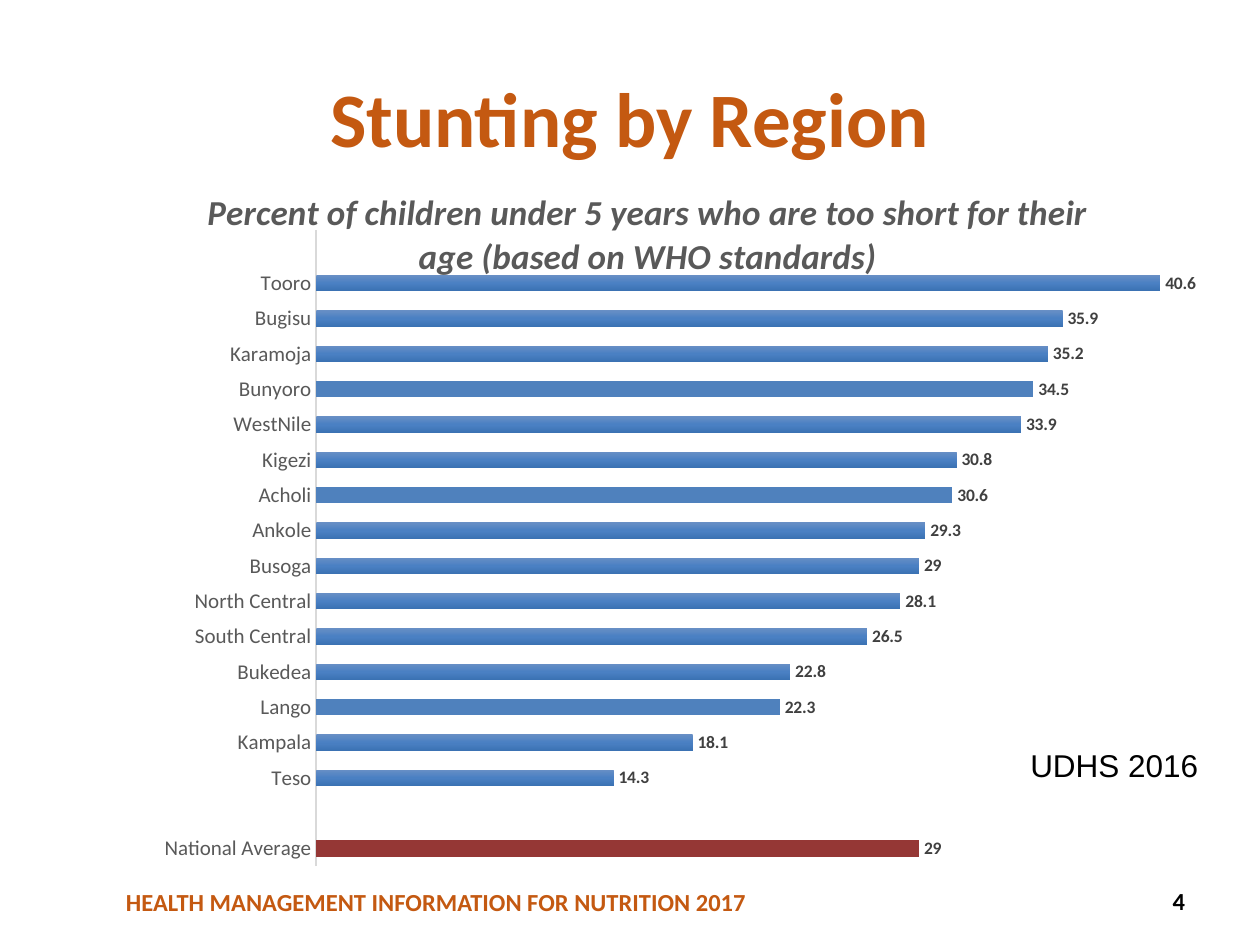
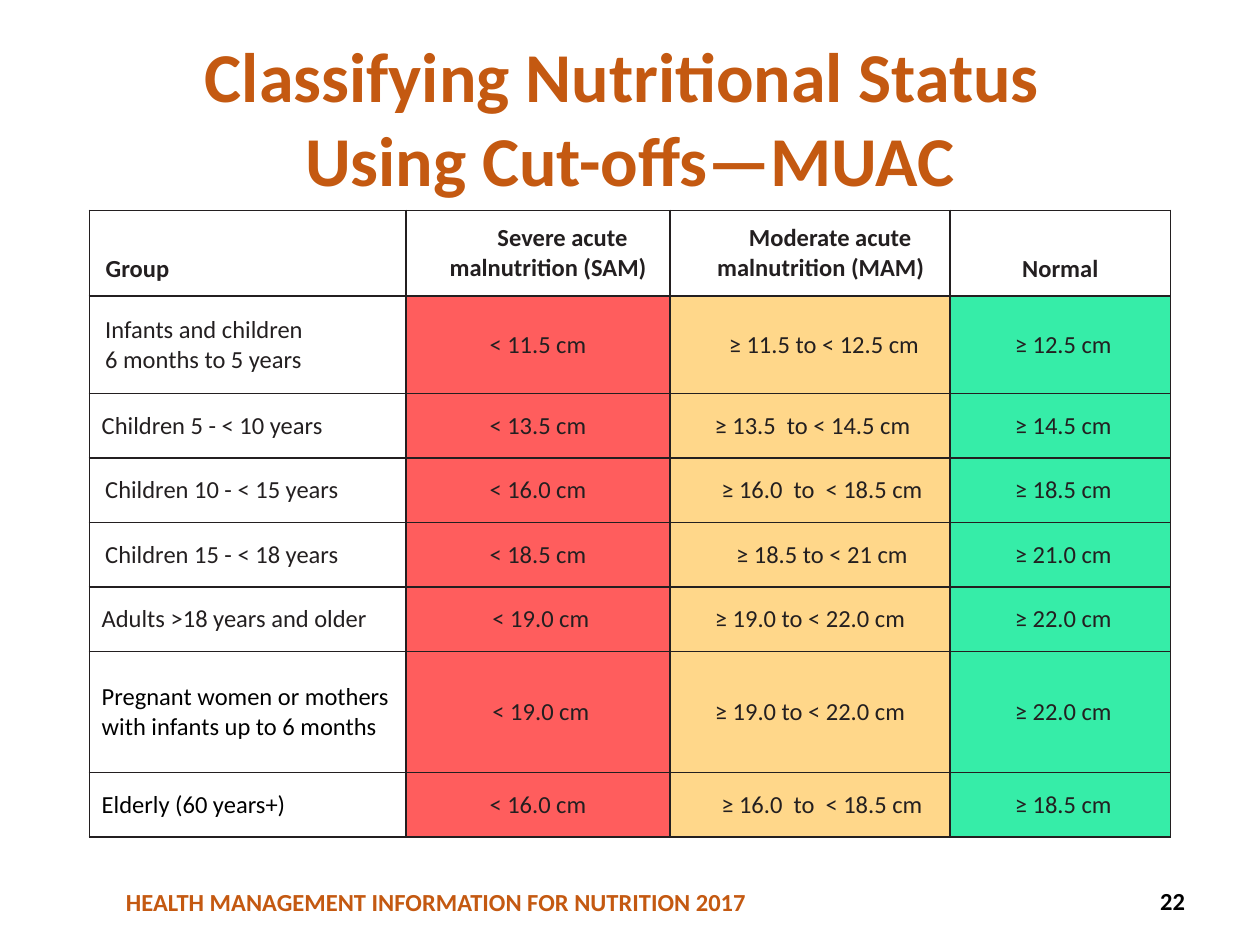
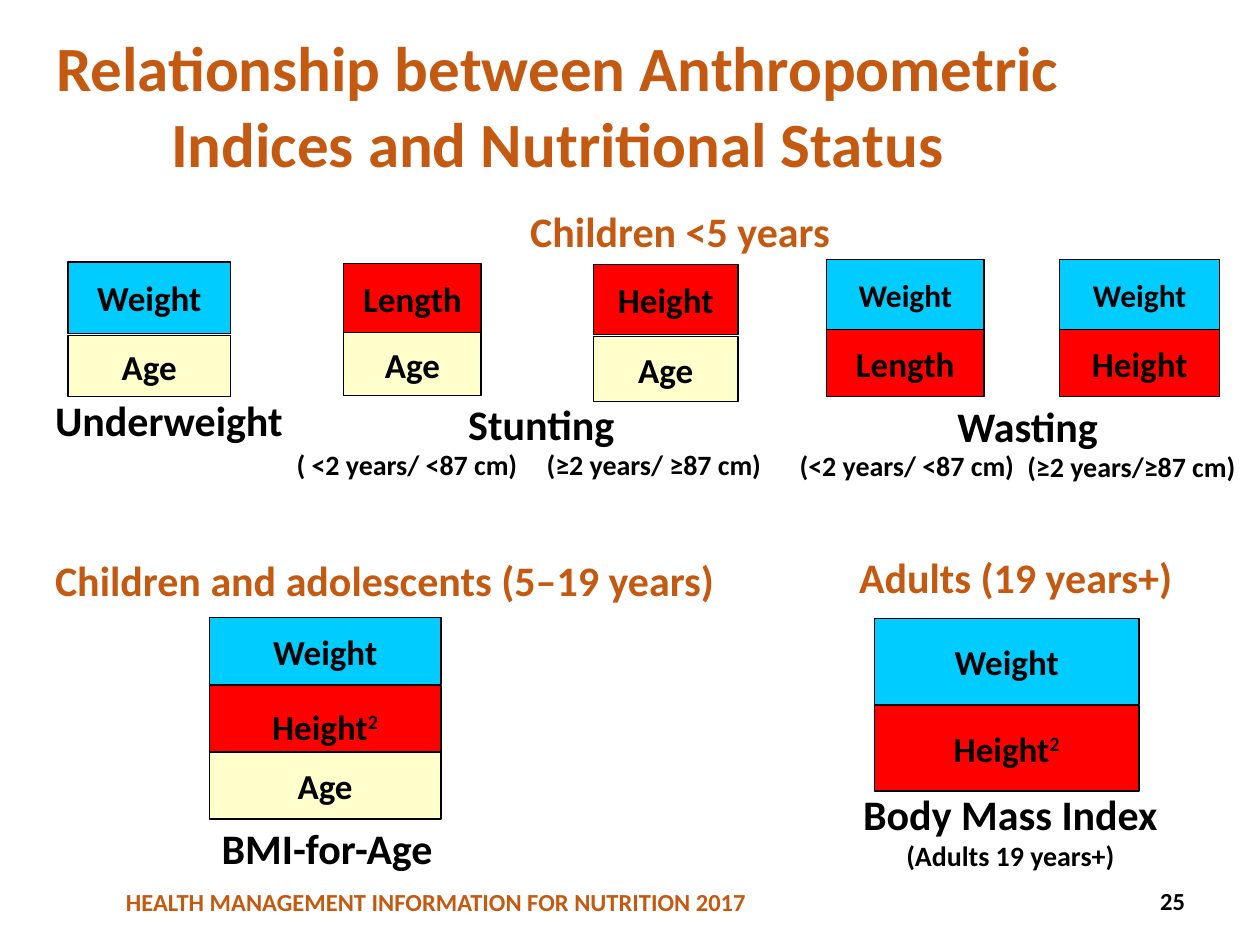
"""Build three nutrition slides: a stunting chart, a MUAC table and an indices diagram."""
from copy import deepcopy

from pptx import Presentation
from pptx import util as u
from pptx.chart.data import CategoryChartData
from pptx.dml.color import RGBColor
from pptx.enum import chart as charts, shapes, text
from pptx.oxml import parse_xml
from pptx.oxml.ns import nsdecls

COLORS = {
    "title": "C45911", "black": "000000", "white": "FFFFFF", "ink": "231F20",
    "gray": "595959", "label": "404040", "axis": "D9D9D9",
    "average": "953735", "flat_bar": "4F81BD",
    "bar_top": "688FC5", "bar_middle": "4A80C3", "bar_bottom": "3B72B3",
    "severe": "FF5D5D", "moderate": "FFD78A", "normal": "36EDA8",
    "blue": "00CCFF", "red": "FF0000", "cream": "FFFFCC",
}
PART_COLORS = {"Weight": "blue", "Length": "red", "Height": "red",
               "Height2": "red", "Age": "cream"}
FOOTER = "HEALTH MANAGEMENT INFORMATION FOR NUTRITION 2017"
CENTER, LEFT, RIGHT = text.PP_ALIGN.CENTER, text.PP_ALIGN.LEFT, text.PP_ALIGN.RIGHT

REGIONS = [
    ("National Average", 29), ("", None), ("Teso", 14.3), ("Kampala", 18.1),
    ("Lango", 22.3), ("Bukedea", 22.8), ("South Central", 26.5),
    ("North Central", 28.1), ("Busoga", 29), ("Ankole", 29.3), ("Acholi", 30.6),
    ("Kigezi", 30.8), ("WestNile", 33.9), ("Bunyoro", 34.5), ("Karamoja", 35.2),
    ("Bugisu", 35.9), ("Tooro", 40.6), ("", None),
]
FLAT_REGIONS = {"National Average": "average", "Lango": "flat_bar",
                "Acholi": "flat_bar", "Bunyoro": "flat_bar"}

MUAC_HEADER = ["Group", "Severe acute malnutrition (SAM)",
               "Moderate acute malnutrition (MAM)", "Normal"]
HEADER_INDENTS = [(0.23, 0), (0.41, 0.58), (0.43, 0.38), (0, 0)]
MUAC_ROWS = [
    ("Infants and children\n6 months to 5 years", "< 11.5 cm", "≥ 11.5 to < 12.5 cm", "≥ 12.5 cm"),
    ("Children 5 - < 10 years", "< 13.5 cm", "≥ 13.5  to < 14.5 cm", "≥ 14.5 cm"),
    ("Children 10 - < 15 years", "< 16.0 cm", "≥ 16.0  to  < 18.5 cm", "≥ 18.5 cm"),
    ("Children 15 - < 18 years", "< 18.5 cm", "≥ 18.5 to < 21 cm", "≥ 21.0 cm"),
    ("Adults >18 years and older", "< 19.0 cm", "≥ 19.0 to < 22.0 cm", "≥ 22.0 cm"),
    ("Pregnant women or mothers with infants up to 6 months", "< 19.0 cm",
     "≥ 19.0 to < 22.0 cm", "≥ 22.0 cm"),
    ("Elderly (60 years+)", "< 16.0 cm", "≥ 16.0  to  < 18.5 cm", "≥ 18.5 cm"),
]
ROW_INDENTS = [(0.22, 0, 0.56, 0.12), (0.15, 0, 0.1, 0.12), (0.22, 0, 0.48, 0.12),
               (0.22, 0, 0.48, 0.12), (0.15, 0.12, 0, 0.12), (0.15, 0.12, 0, 0.12),
               (0.15, 0, 0.48, 0.12)]
COLUMN_FILLS = ["white", "severe", "moderate", "normal"]
COLUMN_WIDTHS = [6.38, 5.33, 5.64, 4.45]
ROW_HEIGHTS = [1.73, 1.96, 1.3, 1.3, 1.3, 1.3, 2.44, 1.3]

WASTING_ROWS = (5.23, 1.42, 18), (6.65, 1.35, 20)
STACKS = [
    (1.37, 3.28, [("Weight", 5.28, 1.45, 20), ("Age", 6.76, 1.24, 20)]),
    (6.93, 2.77, [("Length", 5.31, 1.4, 20), ("Age", 6.71, 1.27, 20)]),
    (11.96, 2.92, [("Height", 5.33, 1.42, 20), ("Age", 6.78, 1.32, 20)]),
    (16.66, 3.18, [("Weight", *WASTING_ROWS[0]), ("Length", *WASTING_ROWS[1])]),
    (21.36, 3.23, [("Weight", *WASTING_ROWS[0]), ("Height", *WASTING_ROWS[1])]),
    (4.22, 4.67, [("Height2", 13.82, 1.65, 20), ("Weight", 12.45, 1.35, 20),
                  ("Age", 15.16, 1.35, 20)]),
    (17.63, 5.33, [("Weight", 12.47, 1.73, 20), ("Height2", 14.22, 1.73, 20)]),
]
LABELS = [
    ("Underweight", 0.86, 7.82, 5.72, 24, "black"),
    ("Stunting", 9.19, 7.9, 3.53, 24, "black"),
    ("Wasting", 19.05, 7.95, 4.01, 24, "black"),
    ("BMI-for-Age", 4.22, 16.46, 6.1, 24, "black"),
    ("( <2 years/ <87 cm)", 5.73, 8.89, 5.1, 16, "black"),
    ("(≥2 years/ ≥87 cm)", 10.77, 8.89, 5.0, 16, "black"),
    ("(<2 years/ <87 cm)", 15.87, 8.92, 5.0, 16, "black"),
    ("(≥2 years/≥87 cm)", 20.46, 8.94, 4.9, 16, "black"),
    ("Children <5 years", 10.44, 4.01, 7.32, 24, "title"),
    ("Children and adolescents (5–19 years)", 0.86, 11.05, 14.33, 24, "title"),
    ("Adults (19 years+)", 17.07, 11.0, 7.75, 24, "title"),
]


def rgb(name):
    """Return the named colour."""
    return RGBColor.from_string(COLORS[name])


def set_values(target, values):
    """Set every attribute named in a dict."""
    for name, value in values.items():
        setattr(target, name, value)


def set_font(font, size, color, **extra):
    """Format a font, bold Calibri unless told otherwise."""
    set_values(font, {"name": "Calibri", "size": u.Pt(size), "bold": True, **extra})
    font.color.rgb = rgb(color)


def cm_box(*lengths):
    """Turn centimetres into lengths."""
    return [u.Cm(length) for length in lengths]


def write(frame, content, size, color, align=LEFT, **extra):
    """Fill a text frame, one paragraph a line."""
    frame.text = content
    for para in frame.paragraphs:
        para.alignment = align
        set_font(para.font, size, color, **extra)


def add_label(page, content, left, top, width, size, color, align=LEFT, height=1.02, **extra):
    """Add a wrapped text box."""
    box = page.shapes.add_textbox(*cm_box(left, top, width, height))
    box.text_frame.word_wrap = True
    write(box.text_frame, content, size, color, align, **extra)
    return box


def add_rect(container, place, fill, line=None):
    """Add a flat rectangle."""
    rect = container.shapes.add_shape(shapes.MSO_SHAPE.RECTANGLE, *cm_box(*place))
    rect.shadow.inherit = False
    rect.fill.solid()
    rect.fill.fore_color.rgb = rgb(fill)
    if line:
        rect.line.color.rgb = rgb(line)
        rect.line.width = u.Pt(0.75)
    else:
        rect.line.fill.background()
    rect.text_frame.vertical_anchor = text.MSO_ANCHOR.MIDDLE
    return rect


def add_page(deck, title, size, number, place=(1.27, 0.76, 22.86, 3.18)):
    """Add a slide with its title, footer band and number."""
    page = deck.slides.add_slide(deck.slide_layouts[5])
    band = add_rect(page, (0, 16.08, 25.4, 2.97), "white")
    set_values(band.text_frame, {"margin_left": u.Cm(2.54), "margin_top": u.Cm(1.37)})
    write(band.text_frame, FOOTER, 14, "title")
    heading = page.shapes.title
    set_values(heading, dict(zip(("left", "top", "width", "height"), cm_box(*place))))
    set_values(heading.text_frame, {"word_wrap": True, "auto_size": text.MSO_AUTO_SIZE.NONE,
                                    "vertical_anchor": text.MSO_ANCHOR.MIDDLE})
    write(heading.text_frame, title, size, "title", CENTER)
    corner = add_label(page, str(number), 18.22, 17.65, 5.92, 14, "black", RIGHT)
    corner.text_frame.vertical_anchor = text.MSO_ANCHOR.MIDDLE
    return page


def place_in_chart(element, index, target="", **fractions):
    """Give a chart part a manual layout in fractions of the chart."""
    for old in element.findall("{*}layout"):
        element.remove(old)
    inner = f'<c:layoutTarget val="{target}"/>' if target else ""
    modes = '<c:xMode val="edge"/><c:yMode val="edge"/>'
    sizes = "".join(f'<c:{name} val="{value}"/>' for name, value in fractions.items())
    element.insert(index, parse_xml(
        f'<c:layout {nsdecls("c")}><c:manualLayout>{inner}{modes}{sizes}'
        '</c:manualLayout></c:layout>'))


def fill_bars(series):
    """Shade the bars and paint the flat ones."""
    fill = series.format.fill
    fill.gradient()
    fill.gradient_angle = 270
    stops = series._element.xpath("c:spPr//a:gsLst")[0]
    stops.insert(1, deepcopy(stops[0]))
    shades = ("bar_top", "bar_middle", "bar_bottom")
    for index, (stop, shade) in enumerate(zip(fill.gradient_stops, shades)):
        stop.position = index / 2
        stop.color.rgb = rgb(shade)
    for index, (region, _) in enumerate(REGIONS):
        if region in FLAT_REGIONS:
            bar = series.points[index].format.fill
            bar.solid()
            bar.fore_color.rgb = rgb(FLAT_REGIONS[region])


def add_stunting_chart(page):
    """Add the bar chart of stunting by region."""
    data = CategoryChartData()
    data.categories = [region for region, _ in REGIONS]
    data.add_series("Series 1", [value for _, value in REGIONS])
    chart = page.shapes.add_chart(charts.XL_CHART_TYPE.BAR_CLUSTERED,
                                  *cm_box(2.79, 3, 22.56, 14.55), data).chart
    chart.has_legend = False
    set_font(chart.font, 10, "black", bold=False)
    title = chart.chart_title
    write(title.text_frame, "Percent of children under 5 years who are too short "
          "for their age (based on WHO standards)", 20, "gray", CENTER, italic=True)
    place_in_chart(title._element, 1, x=0.056, y=0.045)
    place_in_chart(chart._chartSpace.chart.plotArea, 0, "inner",
                   x=0.159, y=0.113, w=0.836, h=0.881)

    set_values(chart.value_axis, {"visible": False, "has_major_gridlines": False,
                                  "minimum_scale": 0, "maximum_scale": 45})
    axis = chart.category_axis
    set_values(axis, {"major_tick_mark": charts.XL_TICK_MARK.NONE,
                      "minor_tick_mark": charts.XL_TICK_MARK.NONE})
    axis.format.line.color.rgb = rgb("axis")
    axis.format.line.width = u.Pt(1)
    set_font(axis.tick_labels.font, 12, "gray", bold=False)

    plot = chart.plots[0]
    set_values(plot, {"gap_width": 115, "overlap": -20, "vary_by_categories": False,
                      "has_data_labels": True})
    set_values(plot.data_labels, {"show_value": True,
                                  "position": charts.XL_LABEL_POSITION.OUTSIDE_END})
    set_font(plot.data_labels.font, 10, "label")
    plot.series[0].invert_if_negative = False
    fill_bars(plot.series[0])


def format_cell(cell, content, fill, align, color="ink", bold=False, indent=(0, 0)):
    """Write a table cell with its borders, fill and indents."""
    for side in "LRTB":
        cell._tc.get_or_add_tcPr().append(parse_xml(
            f'<a:ln{side} {nsdecls("a")} w="12700"><a:solidFill>'
            f'<a:srgbClr val="{COLORS["ink"]}"/></a:solidFill></a:ln{side}>'))
    cell.fill.solid()
    cell.fill.fore_color.rgb = rgb(fill)
    margins = ("margin_left", "margin_right", "margin_top", "margin_bottom")
    set_values(cell, {name: u.Cm(0.1) for name in margins})
    cell.vertical_anchor = text.MSO_ANCHOR.MIDDLE
    write(cell.text_frame, content, 14, color, align, bold=bold)
    for para in cell.text_frame.paragraphs:
        for name, length in zip(("marL", "indent"), indent):
            para._p.get_or_add_pPr().set(name, str(int(u.Cm(length))))


def add_muac_table(page):
    """Add the table of MUAC cut-offs."""
    table = page.shapes.add_table(len(ROW_HEIGHTS), len(COLUMN_WIDTHS),
                                  *cm_box(1.8, 4.24, sum(COLUMN_WIDTHS), sum(ROW_HEIGHTS))).table
    set_values(table, {"first_row": False, "horz_banding": False})
    for column, width in zip(table.columns, COLUMN_WIDTHS):
        column.width = u.Cm(width)
    for row, height in zip(table.rows, ROW_HEIGHTS):
        row.height = u.Cm(height)
    for index, (content, indent) in enumerate(zip(MUAC_HEADER, HEADER_INDENTS)):
        cell = table.cell(0, index)
        format_cell(cell, content, "white", CENTER if index else LEFT, bold=True, indent=indent)
        if content in ("Group", "Normal"):
            set_values(cell, {"vertical_anchor": text.MSO_ANCHOR.BOTTOM,
                              "margin_bottom": u.Cm(0.24)})
    for row, (contents, indents) in enumerate(zip(MUAC_ROWS, ROW_INDENTS), 1):
        for column, (content, indent) in enumerate(zip(contents, indents)):
            color = "black" if row > 5 and column == 0 else "ink"
            format_cell(table.cell(row, column), content, COLUMN_FILLS[column],
                        CENTER if column else LEFT, color, indent=(indent, 0))


def add_stack(page, left, width, parts):
    """Add one index as a group of stacked measures."""
    group = page.shapes.add_group_shape()
    for measure, top, height, size in parts:
        rect = add_rect(group, (left, top, width, height), PART_COLORS[measure], "black")
        rect.text_frame.word_wrap = False
        write(rect.text_frame, measure.rstrip("2"), size, "black", CENTER)
        if measure.endswith("2"):
            span = rect.text_frame.paragraphs[0].add_run()
            span.text = "2"
            span._r.get_or_add_rPr().set("baseline", "30000")


def main():
    """Build and save the deck."""
    deck = Presentation()
    deck.slide_width, deck.slide_height = cm_box(25.4, 19.05)

    page = add_page(deck, "Stunting by Region", 44, 4)
    add_label(page, "UDHS 2016", 20.52, 14.91, 4.8, 18, "black", name="Arial", bold=False)
    add_stunting_chart(page)

    page = add_page(deck, "Classifying Nutritional Status \vUsing Cut-offs—MUAC", 40, 22)
    add_muac_table(page)

    page = add_page(deck, "Relationship between Anthropometric Indices and Nutritional Status",
                    36, 25, (0, 0.51, 22.48, 3.18))
    for stack in STACKS:
        add_stack(page, *stack)
    for label in LABELS:
        add_label(page, *label)
    index_box = add_label(page, "Body Mass Index\n(Adults 19 years+)", 16.6, 15.77, 7.54,
                          24, "black", CENTER, height=2.49)
    index_box.text_frame.paragraphs[1].font.size = u.Pt(16)

    deck.save("out.pptx")


if __name__ == "__main__":
    main()
